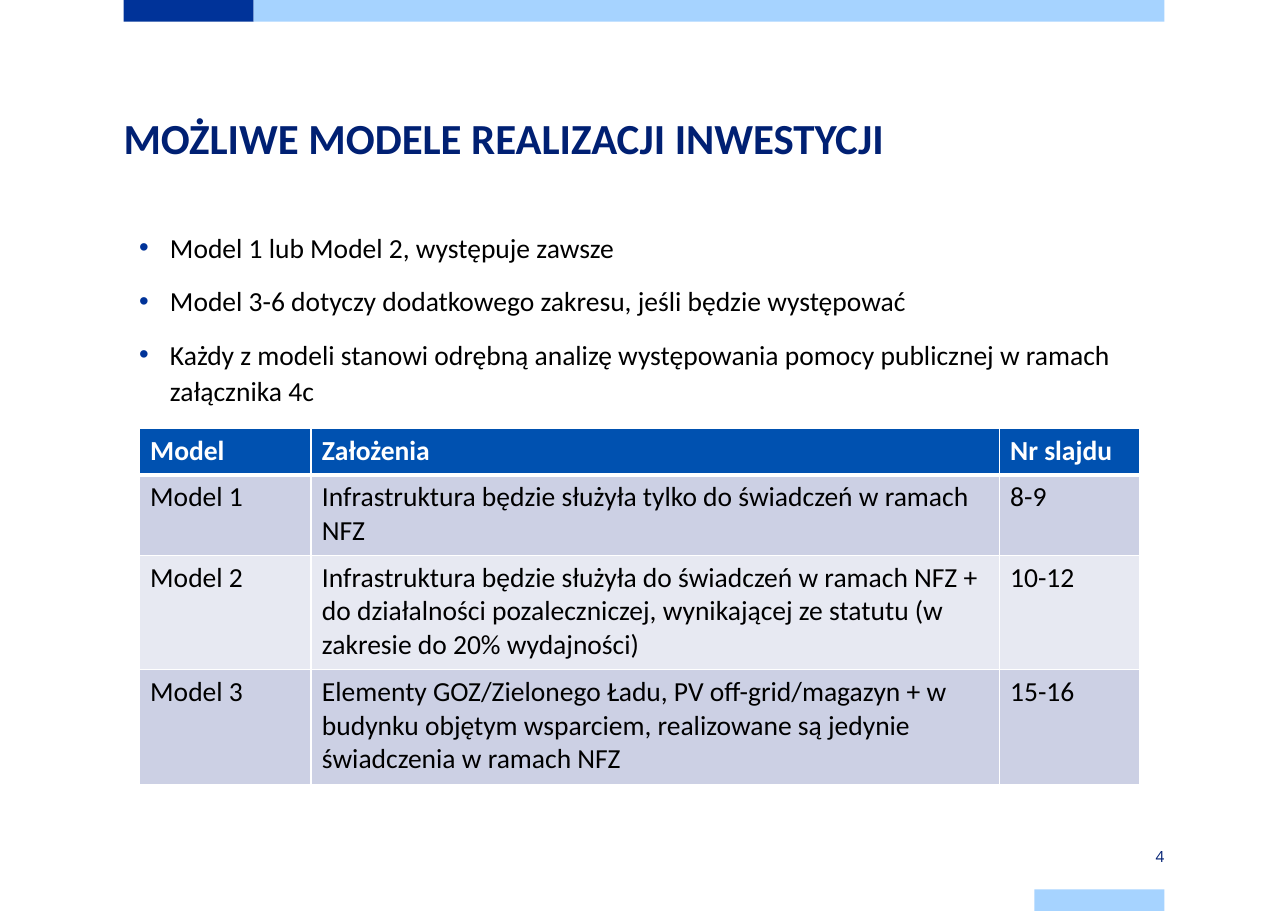
from typing import NamedTuple

from lxml import etree
from pptx import Presentation
from pptx.dml.color import RGBColor
from pptx.enum.shapes import MSO_SHAPE
from pptx.enum.text import MSO_ANCHOR, PP_ALIGN
from pptx.oxml.ns import qn
from pptx.util import Inches, Mm, Pt

RECT = MSO_SHAPE.RECTANGLE
TOP, MIDDLE = MSO_ANCHOR.TOP, MSO_ANCHOR.MIDDLE
LEFT, RIGHT = PP_ALIGN.LEFT, PP_ALIGN.RIGHT

NAVY = RGBColor(0x00, 0x20, 0x73)
BLUE = RGBColor(0x00, 0x33, 0x99)
SKY = RGBColor(0xA6, 0xD3, 0xFF)
HEADER = RGBColor(0x00, 0x51, 0xB0)
BANDS = (RGBColor(0xCC, 0xD0, 0xE4), RGBColor(0xE7, 0xE9, 0xF2))
BLACK = RGBColor(0x00, 0x00, 0x00)
WHITE = RGBColor(0xFF, 0xFF, 0xFF)

# A4 grid: 8 columns of 30 mm between equal margins, 42 rows of 5 mm
WIDTH, HEIGHT = Mm(297), Mm(210)
COL, ROW = Mm(30), HEIGHT // 42
MARGIN = (WIDTH - 8 * COL) // 2


class Area(NamedTuple):
    """Place on the grid, in columns and rows."""
    col: float
    row: float
    cols: float
    rows: float

    def box(self) -> tuple[int, int, int, int]:
        return (MARGIN + round(self.col * COL), round(self.row * ROW),
                round(self.cols * COL), round(self.rows * ROW))


class Style(NamedTuple):
    size: int
    color: RGBColor
    bold: bool = False
    name: str = "Calibri"


class Bar(NamedTuple):
    area: Area
    color: RGBColor


BODY = Style(18, BLACK)
BARS = (
    Bar(Area(0, 0, 1, 1), BLUE),
    Bar(Area(1, 0, 7, 1), SKY),
    Bar(Area(7, 41, 1, 1), SKY),
)
BULLETS = (
    "Model 1 lub Model 2, występuje zawsze",
    "Model 3-6 dotyczy dodatkowego zakresu, jeśli będzie występować",
    "Każdy z modeli stanowi odrębną analizę występowania pomocy publicznej "
    "w ramach załącznika 4c",
)
COL_SPANS = (1.32, 5.29, 1.08)
ROW_SPANS = (2.13, 3.71, 5.28, 5.28)
MODELS = (
    ("Model", "Założenia", "Nr slajdu"),
    ("Model 1", "Infrastruktura będzie służyła tylko do świadczeń w ramach NFZ",
     "8-9"),
    ("Model 2", "Infrastruktura będzie służyła do świadczeń w ramach NFZ + do "
     "działalności pozaleczniczej, wynikającej ze statutu (w zakresie do 20% "
     "wydajności)", "10-12"),
    ("Model 3", "Elementy GOZ/Zielonego Ładu, PV off-grid/magazyn + w budynku "
     "objętym wsparciem, realizowane są jedynie świadczenia w ramach NFZ",
     "15-16"),
)


def add_run(p, text: str, style: Style) -> None:
    r = p.add_run()
    r.text = text
    r.font.size = Pt(style.size)
    r.font.name = style.name
    r.font.bold = style.bold
    r.font.color.rgb = style.color


def add_bar(s, bar: Bar) -> None:
    sp = s.shapes.add_shape(RECT, *bar.area.box())
    sp.shadow.inherit = False
    sp.fill.solid()
    sp.fill.fore_color.rgb = bar.color
    sp.line.fill.background()


def add_bullet(p) -> None:
    pPr = p._p.get_or_add_pPr()
    pPr.set("marL", str(Inches(0.28)))
    pPr.set("indent", str(-Inches(0.28)))
    color = etree.SubElement(pPr, qn("a:buClr"))
    etree.SubElement(color, qn("a:srgbClr"), val=str(BLUE))
    etree.SubElement(pPr, qn("a:buFont"), typeface="Arial")
    etree.SubElement(pPr, qn("a:buChar"), char="•")


def add_text(s, area: Area, lines: tuple[str, ...], style: Style,
             leading: int | None = None, bullets: bool = False,
             align=LEFT, anchor=TOP) -> None:
    tf = s.shapes.add_textbox(*area.box()).text_frame
    tf.word_wrap = True
    tf.vertical_anchor = anchor
    tf.margin_left = tf.margin_right = tf.margin_top = tf.margin_bottom = 0
    for i, line in enumerate(lines):
        p = tf.add_paragraph() if i else tf.paragraphs[0]
        if bullets:
            add_bullet(p)
        p.alignment = align
        if leading:
            p.line_spacing = Pt(leading)
        if i:
            p.space_before = Pt(11)
        add_run(p, line, style)


def add_borders(cell, bottom: int) -> None:
    tcPr = cell._tc.get_or_add_tcPr()
    widths = {"a:lnL": 1, "a:lnR": 1, "a:lnT": 1, "a:lnB": bottom}
    for i, (tag, width) in enumerate(widths.items()):
        ln = etree.Element(qn(tag), w=str(Pt(width)))
        fill = etree.SubElement(ln, qn("a:solidFill"))
        etree.SubElement(fill, qn("a:srgbClr"), val=str(WHITE))
        tcPr.insert(i, ln)


def add_models(s, col: float, row: float) -> None:
    area = Area(col, row, sum(COL_SPANS), sum(ROW_SPANS))
    table = s.shapes.add_table(len(MODELS), len(COL_SPANS), *area.box()).table
    for column, span in zip(table.columns, COL_SPANS):
        column.width = round(span * COL)
    for i, (span, texts) in enumerate(zip(ROW_SPANS, MODELS)):
        table.rows[i].height = round(span * ROW)
        style = BODY if i else Style(18, WHITE, bold=True)
        for j, text in enumerate(texts):
            cell = table.cell(i, j)
            cell.fill.solid()
            cell.fill.fore_color.rgb = BANDS[(i - 1) % 2] if i else HEADER
            # The rule under the header is heavier, from both sides
            add_borders(cell, bottom=1 if i else 3)
            add_run(cell.text_frame.paragraphs[0], text, style)
            if i == 1:
                cell._tc.tcPr.find(qn("a:lnT")).set("w", str(Pt(3)))


def main() -> None:
    prs = Presentation()
    prs.slide_width, prs.slide_height = WIDTH, HEIGHT
    s = prs.slides.add_slide(prs.slide_layouts[6])

    # Page bars
    for bar in BARS:
        add_bar(s, bar)

    # Table of models, then the points above it
    add_models(s, 0.12, 19.76)
    add_text(s, Area(0.12, 10.46, 8, 26.92), BULLETS, BODY,
             leading=24, bullets=True)

    # Title and page number
    add_text(s, Area(0, 5, 8, 6), ("MOŻLIWE MODELE REALIZACJI INWESTYCJI",),
             Style(28, NAVY, bold=True), leading=36)
    add_text(s, Area(7, 39, 1, 1), ("4",), Style(10, NAVY, name="Open Sans"),
             align=RIGHT, anchor=MIDDLE)

    prs.save("out.pptx")


if __name__ == "__main__":
    main()
